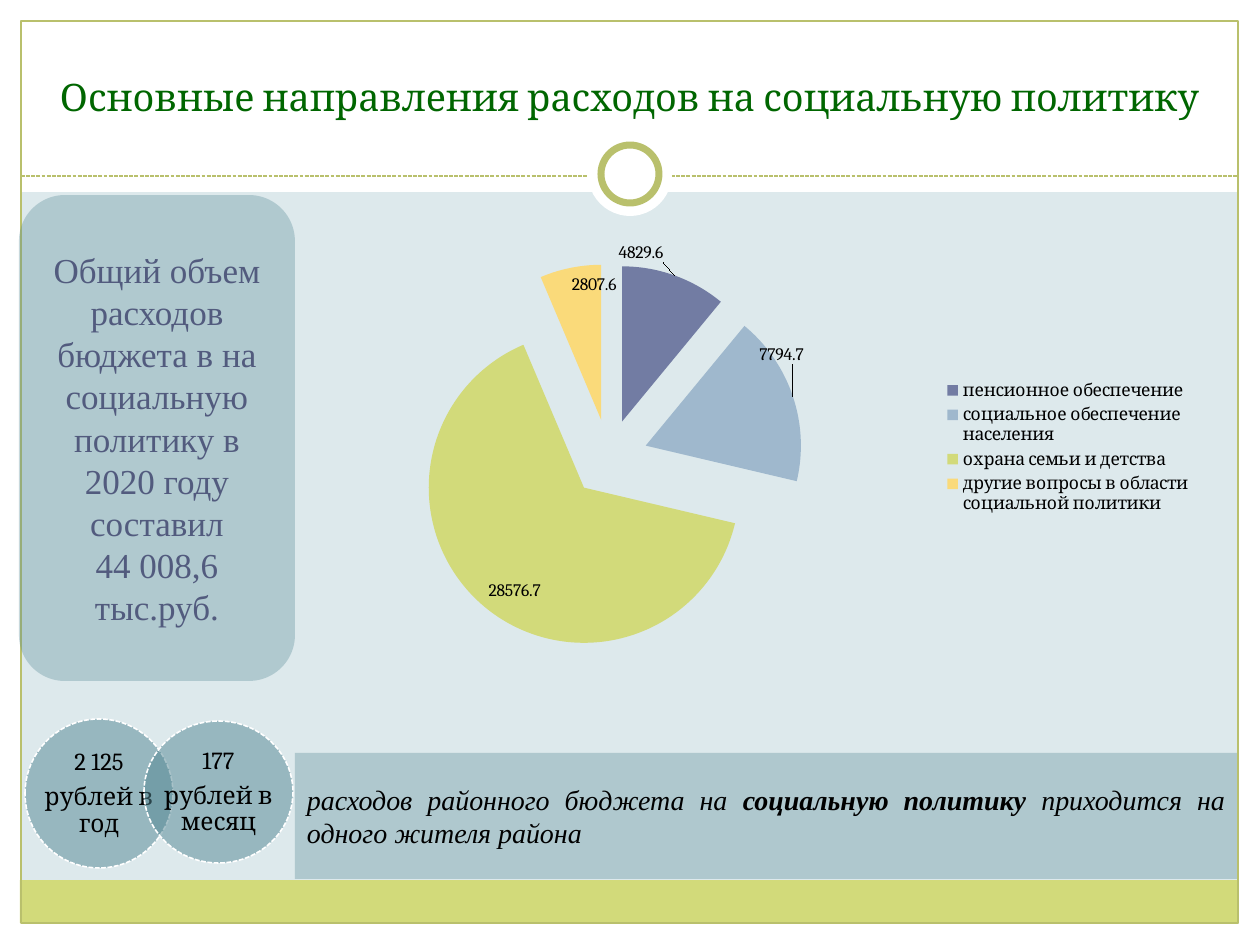
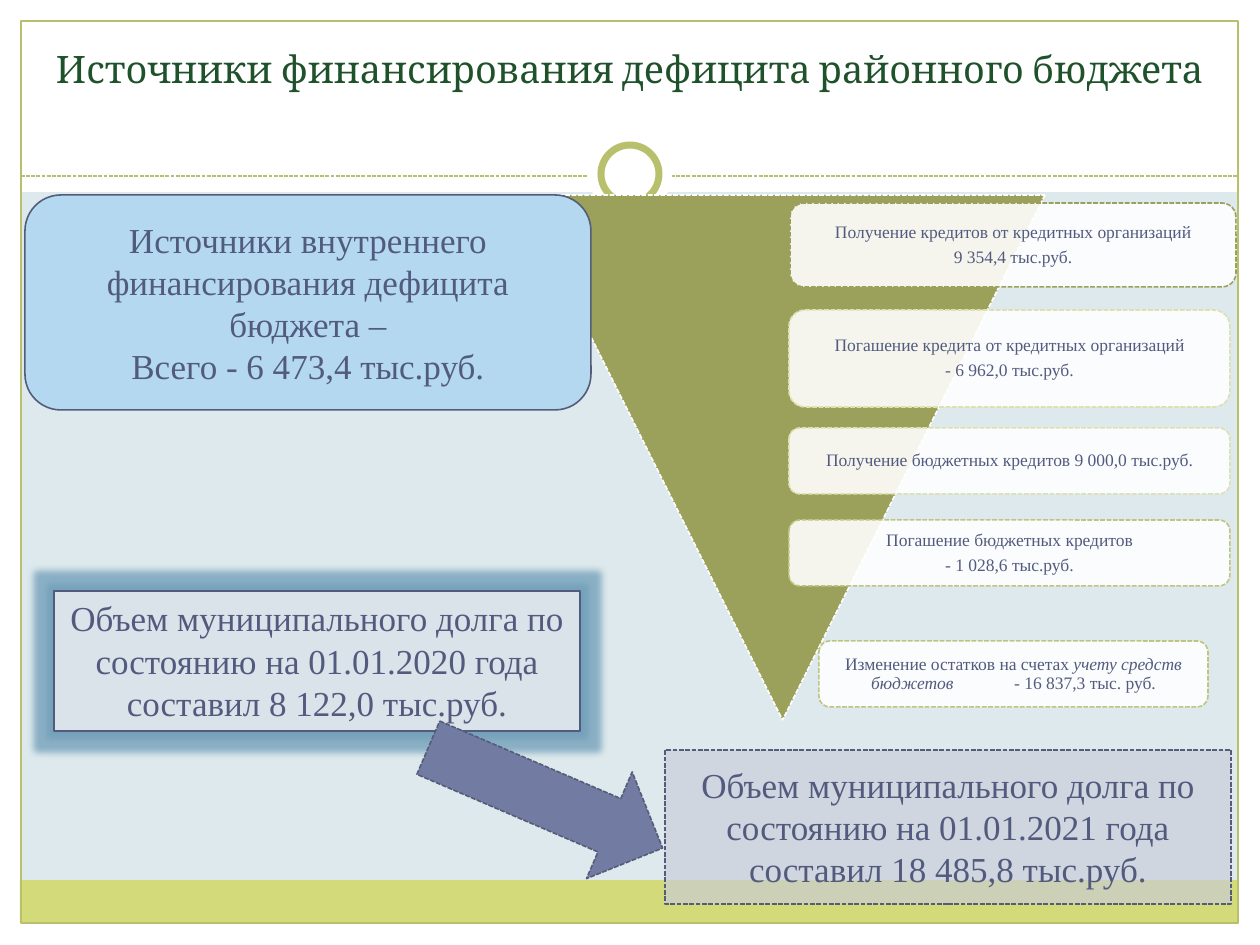
from lxml import etree
from pptx import Presentation
from pptx.chart.data import CategoryChartData
from pptx.dml.color import RGBColor
from pptx.enum.chart import XL_CHART_TYPE, XL_LABEL_POSITION, XL_LEGEND_POSITION
from pptx.enum.dml import MSO_LINE
from pptx.enum.shapes import MSO_CONNECTOR, MSO_SHAPE
from pptx.enum.text import MSO_ANCHOR, PP_ALIGN
from pptx.oxml import parse_xml
from pptx.oxml.ns import nsdecls, qn
from pptx.util import Emu, Pt

SCALE = 914400 / 126
WIDTH, HEIGHT = 1260, 945
HEADING_FONT, BODY_FONT = "Cambria", "Times New Roman"
BACKGROUND, WHITE, BLACK = "DDE9EC", "FFFFFF", "000000"
LIME, FRAME, OLIVE = "D2DA7A", "B9C06C", "9BA15A"
TEAL, SLATE, OUTLINE, VIOLET = "528693", "525B7E", "545C79", "727CA3"

WHITE_BANDS = [(0, 924, 1260, 21), (0, 0, 1260, 192), (0, 0, 21, 945), (1239, 0, 21, 945)]

SPENDING_TITLE = "Основные направления расходов на социальную политику"
SPENDING_TOTAL = [
    "Общий объем расходов бюджета в на социальную политику в 2020 году составил",
    "44 008,6",
    "тыс.руб.",
]
PER_RESIDENT = [
    ((25, 719, 148, 149), ["2 125", "рублей в год"]),
    ((144, 721, 149, 142), ["177", "рублей в месяц"]),
]
PER_RESIDENT_NOTE = [[
    ("расходов районного бюджета на ", "i"),
    ("социальную политику", "bi"),
    (" приходится на одного жителя района", "i"),
]]
SPENDING = [
    ("пенсионное обеспечение", 4829.6, VIOLET),
    ("социальное обеспечение населения", 7794.7, "9FB8CD"),
    ("охрана семьи и детства", 28576.7, LIME),
    ("другие вопросы в области социальной политики", 2807.6, "FADA7A"),
]
MOVED_LABELS = {0: (-0.01, -0.09), 1: (0.02, -0.12)}

DEFICIT_TITLE = "Источники финансирования дефицита районного бюджета"
DEFICIT_TOTAL = [
    "Источники внутреннего финансирования дефицита бюджета –",
    "Всего - 6 473,4 тыс.руб.",
]
SOURCES = [
    ((790, 203, 446, 84), OLIVE,
     ["Получение кредитов от кредитных организаций", "9 354,4 тыс.руб."]),
    ((819, 641, 389, 66), "BEC581",
     [[("Изменение остатков на счетах ", ""), ("учету средств бюджетов", "i"),
       ("\t- 16 837,3 тыс. руб.", "")]]),
    ((789, 310, 441, 97), "DCE1AF",
     ["Погашение кредита от кредитных организаций", "- 6 962,0 тыс.руб."]),
    ((789, 428, 441, 66), "DCE1AF", ["Получение бюджетных кредитов 9 000,0 тыс.руб."]),
    ((789, 520, 441, 66), "BEC581", ["Погашение бюджетных кредитов", "- 1 028,6 тыс.руб."]),
]
AMOUNT_TAB = 143
DEBT = "Объем муниципального долга по состоянию на 01.01.{} года составил {} тыс.руб."


def px(length):
    return Emu(round(length * SCALE))


def rgb(color):
    return RGBColor.from_string(color)


def set_line(line, color, width, dashed=False):
    line.color.rgb = rgb(color)
    line.width = Pt(width)
    if dashed:
        line.dash_style = MSO_LINE.SQUARE_DOT


def add_box(slide, kind, box, fill=None, alpha=100, line=None, width=0.9, dashed=False):
    shape = slide.shapes.add_shape(kind, *map(px, box))
    shape.shadow.inherit = False
    if fill:
        shape.fill.solid()
        shape.fill.fore_color.rgb = rgb(fill)
        if alpha < 100:
            color = shape.element.spPr.find(qn("a:solidFill"))[0]
            etree.SubElement(color, qn("a:alpha"), val=str(alpha * 1000))
    else:
        shape.fill.background()
    if line:
        set_line(shape.line, line, width, dashed)
    else:
        shape.line.fill.background()
    return shape


def write(shape, paragraphs, size, font=BODY_FONT, color=SLATE, align=PP_ALIGN.CENTER,
          anchor=MSO_ANCHOR.MIDDLE, insets=(12, 6, 12, 6), tight=False):
    """Fill a shape with paragraphs: each a string or a list of (text, style) runs."""
    frame = shape.text_frame
    frame.word_wrap = True
    frame.vertical_anchor = anchor
    (frame.margin_left, frame.margin_top,
     frame.margin_right, frame.margin_bottom) = map(px, insets)
    for index, content in enumerate(paragraphs):
        paragraph = frame.add_paragraph() if index else frame.paragraphs[0]
        paragraph.alignment = align
        if tight:
            paragraph.line_spacing = 0.9
            paragraph.space_after = Pt(size * 0.35)
        runs = [(content, "")] if isinstance(content, str) else content
        for text, style in runs:
            run = paragraph.add_run()
            run.text = text
            run.font.size = Pt(size)
            run.font.name = font
            run.font.bold = "b" in style
            run.font.italic = "i" in style
            run.font.color.rgb = rgb(color)


def add_text(slide, box, paragraphs, size, **options):
    write(slide.shapes.add_textbox(*map(px, box)), paragraphs, size, **options)


def add_base_slide(presentation, title, color, title_height, title_bottom):
    """Add a slide with the shared frame, bands, ring and title."""
    slide = presentation.slides.add_slide(presentation.slide_layouts[6])
    slide.background.fill.solid()
    slide.background.fill.fore_color.rgb = rgb(BACKGROUND)
    for band in WHITE_BANDS:
        add_box(slide, MSO_SHAPE.RECTANGLE, band, WHITE)
    add_box(slide, MSO_SHAPE.RECTANGLE, (20, 880, 1218, 43), LIME)
    add_box(slide, MSO_SHAPE.RECTANGLE, (21, 21, 1217, 902), line=FRAME, width=0.75)
    divider = slide.shapes.add_connector(
        MSO_CONNECTOR.STRAIGHT, px(21), px(176), px(1238), px(176))
    set_line(divider.line, FRAME, 0.75, dashed=True)
    etree.SubElement(divider.element.spPr, qn("a:effectLst"))
    add_box(slide, MSO_SHAPE.OVAL, (588, 132, 84, 84), WHITE)
    add_box(slide, MSO_SHAPE.OVAL, (601, 145, 58, 58), WHITE, line=FRAME, width=4)
    add_text(slide, (42, 32, 1176, title_height), [title], 21.6, font=HEADING_FONT,
             color=color, anchor=MSO_ANCHOR.BOTTOM, insets=(0, 6, 0, title_bottom))
    return slide


def manual_layout(x, y, width=None, height=None, inner=False):
    """Build a c:layout; with no size it is an offset from the automatic place."""
    values = []
    if inner:
        values.append(("layoutTarget", "inner"))
    if width:
        values += [("xMode", "edge"), ("yMode", "edge")]
    values += [("x", x), ("y", y)]
    if width:
        values += [("w", width), ("h", height)]
    body = "".join(f'<c:{name} val="{value}"/>' for name, value in values)
    return parse_xml(f'<c:layout {nsdecls("c")}><c:manualLayout>{body}'
                     '</c:manualLayout></c:layout>')


def add_spending_chart(slide):
    data = CategoryChartData()
    data.categories = [name for name, _, _ in SPENDING]
    data.add_series("Series 1", [value for _, value, _ in SPENDING])
    chart = slide.shapes.add_chart(
        XL_CHART_TYPE.PIE, px(315), px(224), px(891), px(446), data).chart
    chart.has_title = False
    chart.font.size = Pt(10)
    chart.font.name = HEADING_FONT
    chart.font.color.rgb = rgb(BLACK)
    chart.has_legend = True
    chart.legend.position = XL_LEGEND_POSITION.RIGHT
    chart.legend.include_in_layout = False
    plot = chart.plots[0]
    plot.vary_by_categories = True
    series = plot.series[0]
    for index, (_, _, color) in enumerate(SPENDING):
        fill = series.points[index].format.fill
        fill.solid()
        fill.fore_color.rgb = rgb(color)
    labels = series.data_labels
    labels.show_value = True
    labels.position = XL_LABEL_POSITION.INSIDE_END
    for index in MOVED_LABELS:
        series.points[index].data_label.position = XL_LABEL_POSITION.INSIDE_END

    root = chart.element
    explosion = parse_xml(f'<c:explosion {nsdecls("c")} val="25"/>')
    root.xpath(".//c:dPt")[0].addprevious(explosion)
    for label, offset in zip(root.xpath(".//c:dLbl"), MOVED_LABELS.values()):
        label.find(qn("c:idx")).addnext(manual_layout(*offset))
    plot_area = root.xpath(".//c:plotArea")[0]
    legend_position = root.xpath(".//c:legendPos")[0]
    for old in root.xpath(".//c:plotArea/c:layout | .//c:legend/c:layout"):
        old.getparent().remove(old)
    plot_area.insert(0, manual_layout(0.11, 0.09, 0.44, 0.87, inner=True))
    legend_position.addnext(manual_layout(0.7, 0.34, 0.29, 0.32))


def add_spending_slide(presentation):
    slide = add_base_slide(presentation, SPENDING_TITLE, "006600", 93, 6)
    for box, lines in PER_RESIDENT:
        add_box(slide, MSO_SHAPE.OVAL, box, TEAL, 50, WHITE, dashed=True)
        add_text(slide, box, lines, 14, font=HEADING_FONT, color=BLACK,
                 insets=(8, 3, 8, 3), tight=True)
    note = add_box(slide, MSO_SHAPE.RECTANGLE, (295, 753, 942, 126), TEAL, 33)
    write(note, PER_RESIDENT_NOTE, 16, color=BLACK, align=PP_ALIGN.JUSTIFY)
    total = add_box(slide, MSO_SHAPE.ROUNDED_RECTANGLE, (19, 195, 276, 486), TEAL, 32)
    write(total, SPENDING_TOTAL, 20)
    add_spending_chart(slide)


def add_glow(shape, color, radius):
    effects = shape.element.spPr.find(qn("a:effectLst"))
    glow = etree.SubElement(effects, qn("a:glow"), rad=str(px(radius)))
    fill = etree.SubElement(glow, qn("a:srgbClr"), val=color)
    etree.SubElement(fill, qn("a:alpha"), val="75000")


def add_deficit_slide(presentation):
    slide = add_base_slide(presentation, DEFICIT_TITLE, "1F512B", 105, 53)
    triangle = add_box(slide, MSO_SHAPE.ISOSCELES_TRIANGLE, (520, 195, 525, 525), OLIVE,
                       line=WHITE, dashed=True)
    triangle.rotation = 180
    for box, line, lines in SOURCES:
        source = add_box(slide, MSO_SHAPE.ROUNDED_RECTANGLE, box, WHITE, 90, line, dashed=True)
        write(source, lines, 10, insets=(5, 5, 5, 5), tight=True)
        for paragraph in source.text_frame.paragraphs:
            if "\t" in paragraph.text:
                properties = paragraph.runs[0].font and source.element.xpath(".//a:pPr")[0]
                tabs = etree.SubElement(properties, qn("a:tabLst"))
                etree.SubElement(tabs, qn("a:tab"), pos=str(px(AMOUNT_TAB)), algn="l")
    total = add_box(slide, MSO_SHAPE.ROUNDED_RECTANGLE, (25, 195, 566, 215), "B3D8EF",
                    line=OUTLINE)
    write(total, DEFICIT_TOTAL, 20)
    debt_after = add_box(slide, MSO_SHAPE.RECTANGLE, (665, 750, 566, 154), "C7CBDA", 63,
                         OUTLINE, dashed=True)
    write(debt_after, [DEBT.format(2021, "18 485,8")], 20)
    debt_before = add_box(slide, MSO_SHAPE.RECTANGLE, (54, 591, 526, 140), "DBE3EA",
                          line=SLATE, width=0.75)
    add_glow(debt_before, "6F9DB8", 14)
    write(debt_before, [DEBT.format(2020, "8 122,0")], 20, anchor=MSO_ANCHOR.TOP)
    arrow = add_box(slide, MSO_SHAPE.RIGHT_ARROW, (418, 740, 255, 116), VIOLET,
                    line=OUTLINE, dashed=True)
    arrow.rotation = 23.2


def main():
    presentation = Presentation()
    presentation.slide_width, presentation.slide_height = px(WIDTH), px(HEIGHT)
    add_spending_slide(presentation)
    add_deficit_slide(presentation)
    presentation.save("out.pptx")


if __name__ == "__main__":
    main()
